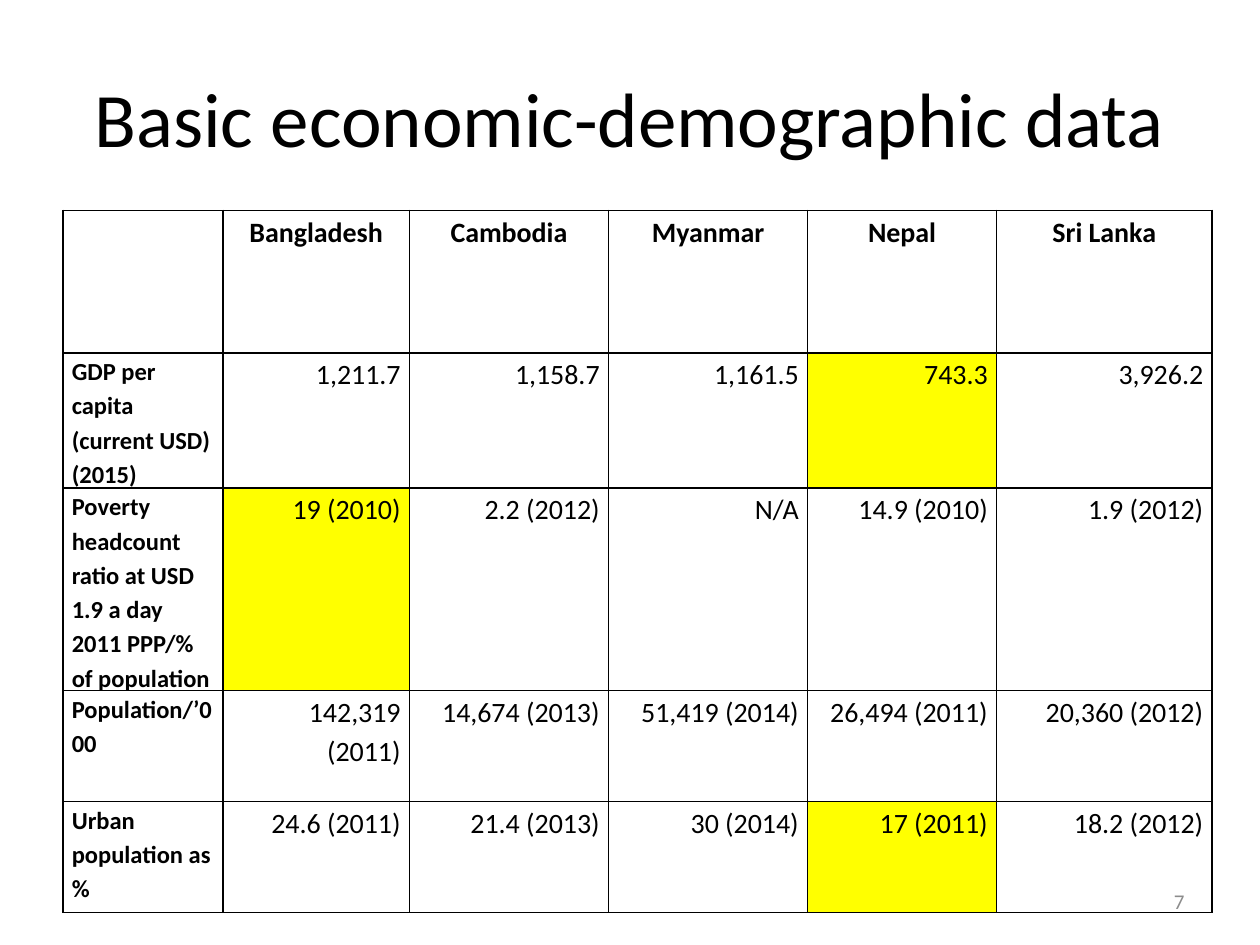
import pptx
import pptx.util
import pptx.dml.color
import pptx.enum.text
import pptx.oxml
import pptx.oxml.ns

Inches, Pt = pptx.util.Inches, pptx.util.Pt
ALIGN = pptx.enum.text.PP_ALIGN
MIDDLE = pptx.enum.text.MSO_ANCHOR.MIDDLE
BLACK = pptx.dml.color.RGBColor(0x00, 0x00, 0x00)
GREY = pptx.dml.color.RGBColor(0x8C, 0x8C, 0x8C)
YELLOW = pptx.dml.color.RGBColor(0xFF, 0xFF, 0x00)

TITLE = "Basic economic-demographic data"
PAGE_NUMBER = "7"
INDICATORS = [
    ["", "Bangladesh", "Cambodia", "Myanmar", "Nepal", "Sri Lanka"],
    ["GDP per capita (current USD) (2015)",
     "1,211.7", "1,158.7", "1,161.5", "743.3", "3,926.2"],
    ["Poverty headcount ratio at USD 1.9 a day 2011 PPP/% of population",
     "19 (2010)", "2.2 (2012)", "N/A", "14.9 (2010)", "1.9 (2012)"],
    ["Population/’000", "142,319 (2011)", "14,674 (2013)", "51,419 (2014)",
     "26,494 (2011)", "20,360 (2012)"],
    ["Urban population as %", "24.6 (2011)", "21.4 (2013)", "30 (2014)",
     "17 (2011)", "18.2 (2012)"],
]
HIGHLIGHTS = {(1, 4), (2, 1), (4, 4)}
COLUMN_WIDTHS = [1.27, 1.48, 1.58, 1.58, 1.5, 1.71]
ROW_HEIGHTS = [1.13, 0.88, 1.22, 0.88, 0.88]


def style(paragraph, size, color, align, bold=False):
    paragraph.alignment = align
    font = paragraph.font
    font.name, font.size, font.bold = "Calibri", Pt(size), bold
    font.color.rgb = color


def add_label(slide, text, box, size, color, align):
    frame = slide.shapes.add_textbox(*map(Inches, box)).text_frame
    frame.word_wrap = True
    frame.vertical_anchor = MIDDLE
    frame.text = text
    style(frame.paragraphs[0], size, color, align)


def add_borders(cell):
    properties = cell._tc.get_or_add_tcPr()
    for position, side in enumerate(("lnL", "lnR", "lnT", "lnB")):
        border = pptx.oxml.parse_xml(
            f'<a:{side} {pptx.oxml.ns.nsdecls("a")} w="{Pt(1)}"><a:solidFill>'
            f'<a:srgbClr val="{BLACK}"/></a:solidFill></a:{side}>')
        properties.insert(position, border)


def fill_cell(cell, text, row, column):
    cell.margin_left = cell.margin_right = Inches(0.07)
    cell.margin_top = cell.margin_bottom = 0
    if (row, column) in HIGHLIGHTS:
        cell.fill.solid()
        cell.fill.fore_color.rgb = YELLOW
    else:
        cell.fill.background()
    add_borders(cell)
    if not text:
        return
    cell.text = text
    paragraph = cell.text_frame.paragraphs[0]
    paragraph.line_spacing = 1.15
    paragraph.space_after = Pt(1)
    if row == 0:
        style(paragraph, 16, BLACK, ALIGN.CENTER, bold=True)
    elif column == 0:
        style(paragraph, 14, BLACK, ALIGN.LEFT, bold=True)
    else:
        style(paragraph, 16, BLACK, ALIGN.RIGHT)


def add_indicators(slide):
    table = slide.shapes.add_table(
        len(ROW_HEIGHTS), len(COLUMN_WIDTHS), Inches(0.5), Inches(1.67),
        Inches(sum(COLUMN_WIDTHS)), Inches(sum(ROW_HEIGHTS))).table
    table.first_row = table.horz_banding = False
    for column, width in zip(table.columns, COLUMN_WIDTHS):
        column.width = Inches(width)
    for row, height in zip(table.rows, ROW_HEIGHTS):
        row.height = Inches(height)
    for row, texts in enumerate(INDICATORS):
        for column, text in enumerate(texts):
            fill_cell(table.cell(row, column), text, row, column)


def main():
    deck = pptx.Presentation()
    deck.slide_width, deck.slide_height = Inches(10), Inches(7.5)
    slide = deck.slides.add_slide(deck.slide_layouts[6])
    add_label(slide, TITLE, (0.5, 0.3, 9, 1.25), 44, BLACK, ALIGN.CENTER)
    add_indicators(slide)
    add_label(slide, PAGE_NUMBER, (7.17, 6.95, 2.33, 0.4), 12, GREY, ALIGN.RIGHT)
    deck.save("out.pptx")


if __name__ == "__main__":
    main()
